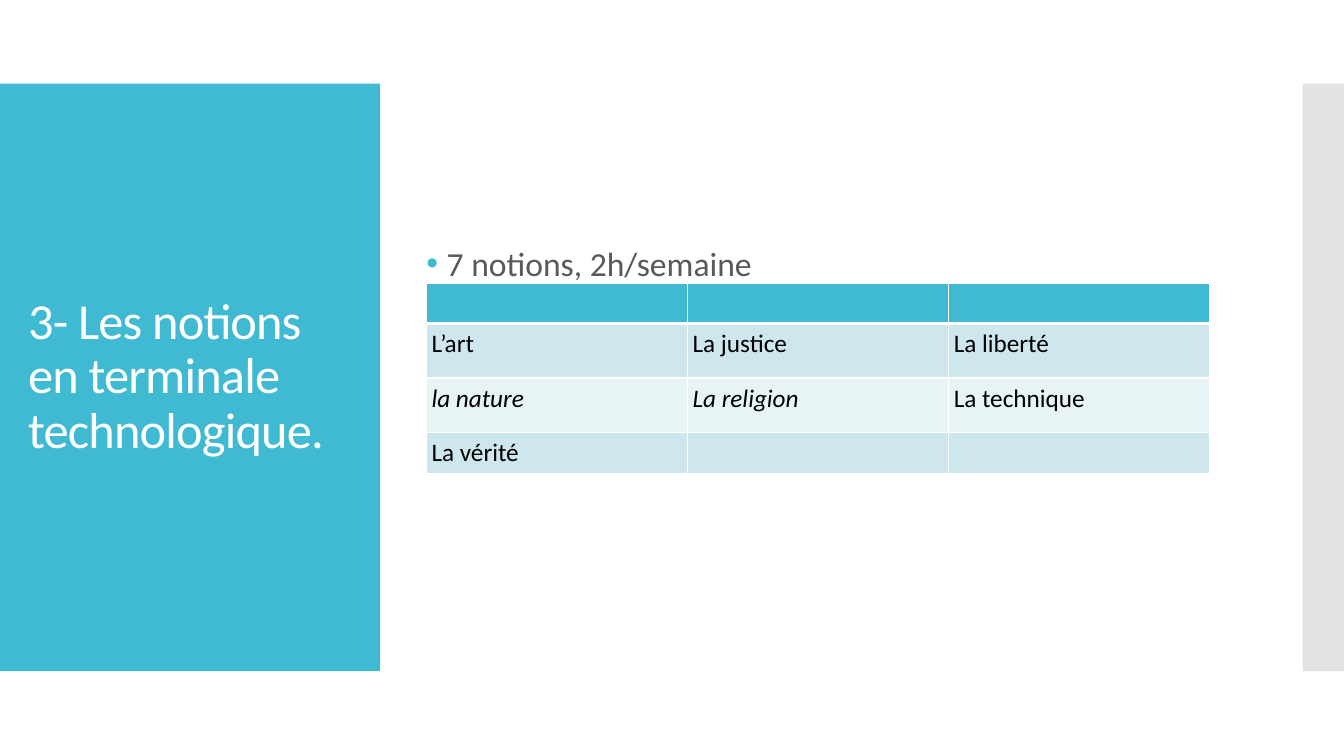
from lxml import etree
from pptx import Presentation
from pptx.dml.color import RGBColor
from pptx.enum.shapes import MSO_SHAPE
from pptx.enum.text import MSO_ANCHOR, MSO_AUTO_SIZE, PP_ALIGN
from pptx.oxml.ns import qn
from pptx.util import Inches, Pt

RECTANGLE = MSO_SHAPE.RECTANGLE
MIDDLE, TOP = MSO_ANCHOR.MIDDLE, MSO_ANCHOR.TOP
LEFT = PP_ALIGN.LEFT
NO_AUTOFIT = MSO_AUTO_SIZE.NONE
COLORS = {
    "teal": "40BAD2", "gray": "C8C8C8", "white": "FFFFFF", "black": "000000",
    "text": "595959", "band_dark": "CEE6EE", "band_light": "E8F3F6",
}


def write_text(frame, text, size, color, italic=False, spacing=0, line_spacing=1.0):
    paragraph = frame.paragraphs[0]
    paragraph.text = text
    paragraph.alignment = LEFT
    paragraph.line_spacing = line_spacing
    paragraph.space_before = Pt(0)
    for run in paragraph.runs or [paragraph.add_run()]:
        run.font.name = "Calibri"
        run.font.size = Pt(size)
        run.font.italic = italic
        run.font.color.rgb = RGBColor.from_string(COLORS[color])
        run.font._element.set("spc", str(round(spacing * 100)))
    return paragraph


def add_border(cell, side, width):
    properties = cell._tc.get_or_add_tcPr()
    line = etree.Element(qn(f"a:{side}"), w=str(Pt(width)))
    fill = etree.SubElement(line, qn("a:solidFill"))
    etree.SubElement(fill, qn("a:srgbClr"), val=COLORS["white"])
    position = len(properties.findall(qn("a:lnL")) + properties.findall(qn("a:lnR"))
                   + properties.findall(qn("a:lnT")))
    properties.insert(position, line)


presentation = Presentation()
presentation.slide_width = Inches(13.33)
presentation.slide_height = Inches(7.5)
slide = presentation.slides.add_slide(presentation.slide_layouts[1])
title, body = slide.placeholders

panels = [(0, 3.77, "teal", 100), (12.92, 0.42, "gray", 50)]
for order, (left, width, color, opacity) in enumerate(panels):
    panel = slide.shapes.add_shape(
        RECTANGLE, Inches(left), Inches(0.83), Inches(width), Inches(5.83))
    panel.shadow.inherit = False
    panel.line.fill.background()
    panel.fill.solid()
    panel.fill.fore_color.rgb = RGBColor.from_string(COLORS[color])
    if opacity < 100:
        fill_color = panel._element.spPr.find(f".//{qn('a:srgbClr')}")
        etree.SubElement(fill_color, qn("a:alpha"), val=str(opacity * 1000))
    slide.shapes._spTree.insert(2 + order, panel._element)

placements = [
    (title, (0.28, 1.23, 3.22, 5.03), MIDDLE, 0),
    (body, (4.23, 0.95, 8.12, 5.53), TOP, 1.5),
]
for placeholder, box, anchor, top_inset in placements:
    placeholder.left, placeholder.top, placeholder.width, placeholder.height = map(Inches, box)
    frame = placeholder.text_frame
    frame.word_wrap = True
    frame.auto_size = NO_AUTOFIT
    frame.vertical_anchor = anchor
    frame.margin_left = frame.margin_right = frame.margin_bottom = 0
    frame.margin_top = Inches(top_inset)

write_text(title.text_frame, "3- Les notions\ven terminale technologique.",
           size=36, color="white", spacing=-0.6, line_spacing=0.9)

bullet = write_text(body.text_frame, "7 notions, 2h/semaine",
                    size=24, color="text", line_spacing=0.9)
bullet_properties = bullet._p.get_or_add_pPr()
bullet_properties.set("marL", str(Inches(0.2)))
bullet_properties.set("indent", str(Inches(-0.2)))
bullet_color = etree.SubElement(bullet_properties, qn("a:buClr"))
etree.SubElement(bullet_color, qn("a:srgbClr"), val=COLORS["teal"])
etree.SubElement(bullet_properties, qn("a:buFont"), typeface="Arial")
etree.SubElement(bullet_properties, qn("a:buChar"), char="•")

notions = [
    ["", "", ""],
    ["L’art", "La justice", "La liberté"],
    ["la nature", "La religion", "La technique"],
    ["La vérité", "", ""],
]
italic_notions = {"la nature", "La religion"}
row_heights = [0.4, 0.54, 0.54, 0.4]
row_colors = ["teal", "band_dark", "band_light", "band_dark"]

table = slide.shapes.add_table(
    4, 3, Inches(4.23), Inches(2.81), Inches(7.76), Inches(sum(row_heights))).table
for column in table.columns:
    column.width = Inches(2.59)
for row_index, notion_row in enumerate(notions):
    table.rows[row_index].height = Inches(row_heights[row_index])
    for column_index, notion in enumerate(notion_row):
        cell = table.cell(row_index, column_index)
        cell.margin_left = cell.margin_right = Inches(0.05)
        cell.margin_top = cell.margin_bottom = Inches(0.05)
        cell.fill.solid()
        cell.fill.fore_color.rgb = RGBColor.from_string(COLORS[row_colors[row_index]])
        write_text(cell.text_frame, notion, size=18, color="black",
                   italic=notion in italic_notions)
        top_width = 3 if row_index == 1 else 0.96
        bottom_width = 3 if row_index == 0 else 0.96
        for side, width in [("lnL", 0.96), ("lnR", 0.96),
                            ("lnT", top_width), ("lnB", bottom_width)]:
            add_border(cell, side, width)

presentation.save("out.pptx")
